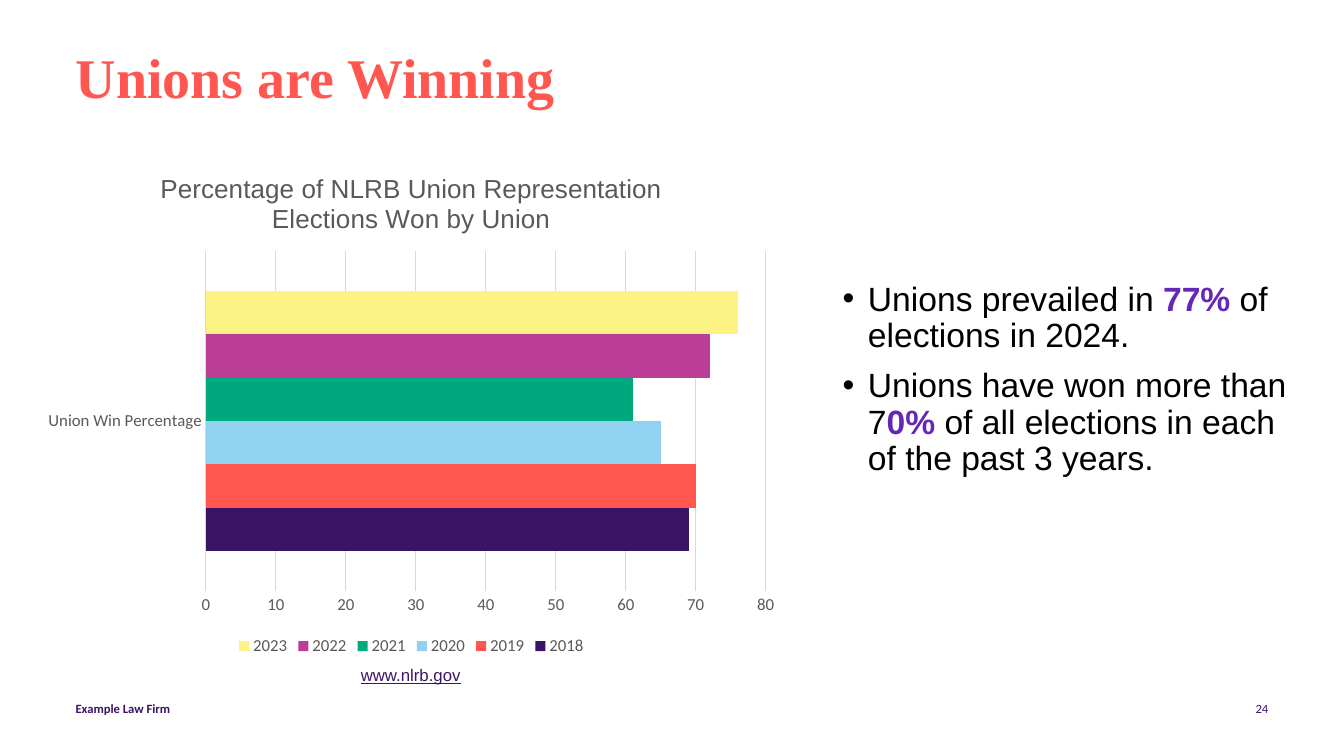
from lxml.etree import SubElement
from pptx import Presentation
from pptx.chart.data import CategoryChartData
from pptx.dml.color import RGBColor
from pptx.enum.chart import XL_CHART_TYPE as ChartType
from pptx.enum.chart import XL_LEGEND_POSITION as LegendPosition
from pptx.enum.chart import XL_TICK_MARK as TickMark
from pptx.enum.text import MSO_ANCHOR as Anchor
from pptx.enum.text import MSO_AUTO_SIZE as AutoSize
from pptx.enum.text import PP_ALIGN as Align
from pptx.oxml.ns import qn
from pptx.util import Pt

PX = 9144  # EMU per px, 100 px to the inch

CORAL = RGBColor(0xFF, 0x57, 0x50)
INDIGO = RGBColor(0x3B, 0x14, 0x66)
VIOLET = RGBColor(0x65, 0x27, 0xB7)
BLACK = RGBColor(0x00, 0x00, 0x00)
GREY = RGBColor(0x59, 0x59, 0x59)
LIGHT_GREY = RGBColor(0xD9, 0xD9, 0xD9)

WINS = [
    ("2018", 69, RGBColor(0x3B, 0x13, 0x65)),
    ("2019", 70, CORAL),
    ("2020", 65, RGBColor(0x91, 0xD2, 0xF2)),
    ("2021", 61, RGBColor(0x00, 0xA8, 0x7E)),
    ("2022", 72, RGBColor(0xBC, 0x3D, 0x95)),
    ("2023", 76, RGBColor(0xFD, 0xF3, 0x85)),
]

# Each bullet is a list of (text, highlighted) runs
BULLETS = [
    [("Unions prevailed in ", False), ("77% ", True), ("of elections in 2024.", False)],
    [("Unions have won more than 7", False), ("0% ", True),
     ("of all elections in each of the past 3 years.", False)],
]


def px(*lengths):
    return [length * PX for length in lengths]


def style_font(font, name, size, color, bold=False):
    font.name = name
    font.size = Pt(size)
    font.color.rgb = color
    font.bold = bold


def add_run(paragraph, text, name, size, color, bold=False):
    run = paragraph.add_run()
    run.text = text
    style_font(run.font, name, size, color, bold)
    return run


def clear_insets(frame):
    frame.margin_left = frame.margin_right = frame.margin_top = frame.margin_bottom = 0


def add_text_frame(slide, box, wrap=True):
    frame = slide.shapes.add_textbox(*px(*box)).text_frame
    frame.word_wrap = wrap
    return frame


def set_title(slide, text):
    heading = slide.shapes.title
    heading.left, heading.top, heading.width, heading.height = px(75, 50, 1150, 53)
    frame = heading.text_frame
    clear_insets(frame)
    frame.auto_size = AutoSize.NONE
    frame.vertical_anchor = Anchor.TOP
    paragraph = frame.paragraphs[0]
    paragraph.alignment = Align.LEFT
    paragraph.line_spacing = 0.9
    add_run(paragraph, text, "Times New Roman", 40, CORAL, True)


def add_footer(slide, box, text, align, bold=False):
    frame = add_text_frame(slide, box)
    clear_insets(frame)
    frame.paragraphs[0].alignment = align
    add_run(frame.paragraphs[0], text, "Calibri", 9, INDIGO, bold)


def add_bullets(slide, box, bullets):
    frame = add_text_frame(slide, box)
    for index, runs in enumerate(bullets):
        paragraph = frame.add_paragraph() if index else frame.paragraphs[0]
        paragraph.line_spacing = 0.9
        if index:
            paragraph.space_before = Pt(10)
        properties = paragraph._p.get_or_add_pPr()
        properties.set("marL", str(25 * PX))
        properties.set("indent", str(-25 * PX))
        SubElement(properties, qn("a:buFont")).set("typeface", "Arial")
        SubElement(properties, qn("a:buChar")).set("char", "•")
        for text, highlighted in runs:
            add_run(paragraph, text, "Arial", 24, VIOLET if highlighted else BLACK, highlighted)


def add_source(slide, box, address):
    frame = add_text_frame(slide, box, wrap=False)
    frame.auto_size = AutoSize.SHAPE_TO_FIT_TEXT
    add_run(frame.paragraphs[0], address, "Arial", 12, INDIGO).font.underline = True


def style_axis(axis):
    axis.major_tick_mark = axis.minor_tick_mark = TickMark.NONE
    style_font(axis.tick_labels.font, "Calibri", 12, GREY)


def add_win_chart(slide, box, heading):
    data = CategoryChartData()
    data.categories = ["Union Win Percentage"]
    for year, percentage, _ in WINS:
        data.add_series(year, [percentage])
    chart = slide.shapes.add_chart(ChartType.BAR_CLUSTERED, *px(*box), data).chart
    style_font(chart.font, "Calibri", 10, BLACK)

    # Heading and legend
    chart.has_title = True
    add_run(chart.chart_title.text_frame.paragraphs[0], heading, "Arial", 18.6, GREY)
    chart.chart_title.include_in_layout = False
    chart.has_legend = True
    chart.legend.position = LegendPosition.BOTTOM
    chart.legend.include_in_layout = False
    style_font(chart.legend.font, "Calibri", 12, GREY)

    # Axes
    categories, percentages = chart.category_axis, chart.value_axis
    style_axis(categories)
    style_axis(percentages)
    percentages.minimum_scale, percentages.maximum_scale = 0, 80
    percentages.major_unit = 10
    percentages.has_major_gridlines = True
    percentages.format.line.fill.background()
    for line in (categories.format.line, percentages.major_gridlines.format.line):
        line.color.rgb = LIGHT_GREY
        line.width = Pt(0.75)

    # Bars
    bars = chart.plots[0]
    bars.gap_width = 182
    bars.overlap = 0
    bars.vary_by_categories = False
    for series, (_, _, color) in zip(bars.series, WINS):
        series.format.fill.solid()
        series.format.fill.fore_color.rgb = color


def main():
    deck = Presentation()
    deck.slide_width, deck.slide_height = px(1333, 750)
    slide = deck.slides.add_slide(deck.slide_layouts[5])

    set_title(slide, "Unions are Winning")
    add_footer(slide, (75, 695, 450, 40), "Example Law Firm", Align.LEFT, bold=True)
    add_footer(slide, (958, 695, 300, 40), "24", Align.RIGHT)
    add_bullets(slide, (826, 275, 478, 361), BULLETS)
    add_win_chart(slide, (33, 150, 750, 505),
                  "Percentage of NLRB Union Representation Elections Won by Union")
    add_source(slide, (348, 655, 120, 61), "www.nlrb.gov")

    deck.save("out.pptx")


if __name__ == "__main__":
    main()
